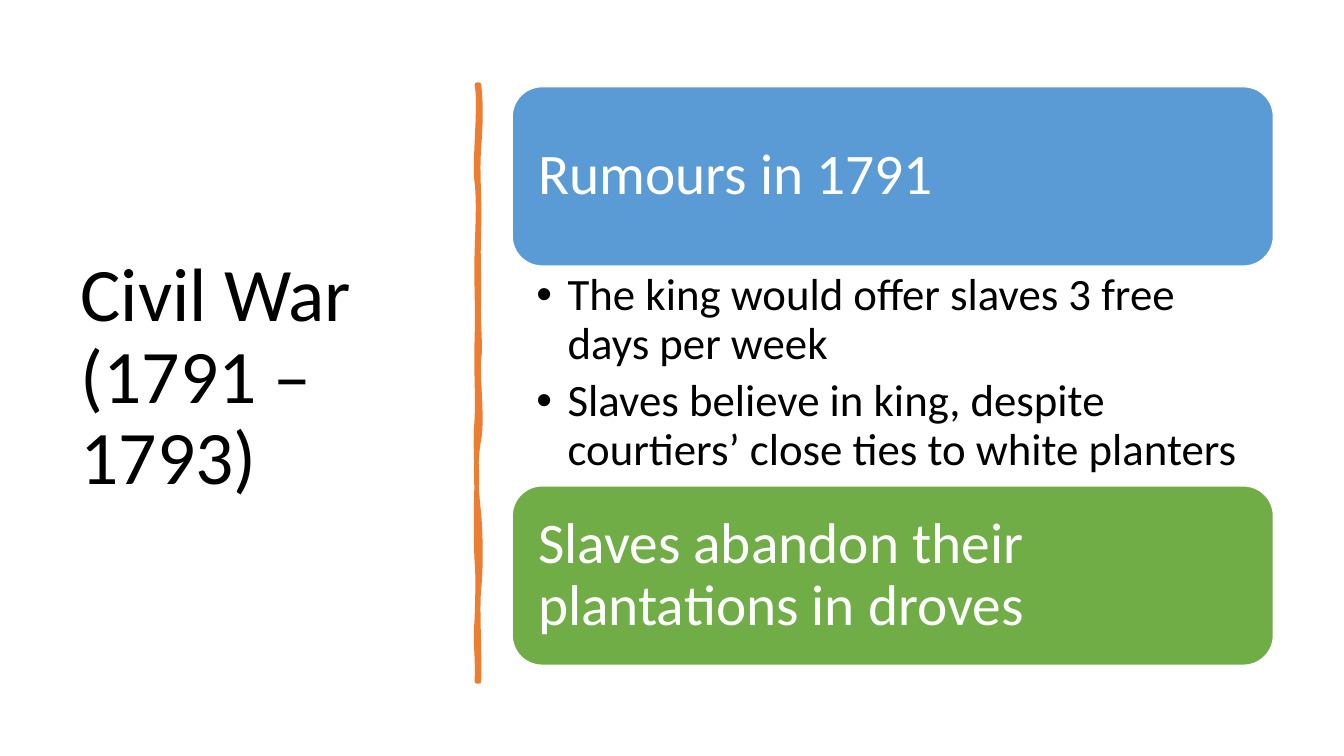
from pptx import Presentation
from pptx.dml.color import RGBColor
from pptx.enum.shapes import MSO_SHAPE
from pptx.enum.text import MSO_ANCHOR, MSO_AUTO_SIZE, PP_ALIGN
from pptx.oxml.ns import qn
from pptx.util import Inches, Pt
from lxml import etree

ROUNDED = MSO_SHAPE.ROUNDED_RECTANGLE
MIDDLE, TOP = MSO_ANCHOR.MIDDLE, MSO_ANCHOR.TOP
LEFT = PP_ALIGN.LEFT
NO_AUTOFIT = MSO_AUTO_SIZE.NONE

BLACK = RGBColor(0x00, 0x00, 0x00)
WHITE = RGBColor(0xFF, 0xFF, 0xFF)
ORANGE = RGBColor(0xED, 0x7D, 0x31)
BLUE = RGBColor(0x5B, 0x9B, 0xD5)
GREEN = RGBColor(0x70, 0xAD, 0x47)

# Brush stroke outline: start point, then two control points and an end per curve
STROKE_START = (4.75, 0.84)
STROKE_CURVES = [
    (4.77, 1.02, 4.77, 1.19, 4.75, 1.46), (4.73, 1.73, 4.76, 1.95, 4.75, 2.26),
    (4.74, 2.57, 4.75, 2.62, 4.75, 2.94), (4.74, 3.25, 4.77, 3.42, 4.75, 3.56),
    (4.73, 3.7, 4.79, 4.14, 4.75, 4.36), (4.71, 4.57, 4.72, 4.84, 4.75, 5.1),
    (4.77, 5.36, 4.77, 5.64, 4.75, 5.84), (4.73, 6.03, 4.76, 6.5, 4.75, 6.76),
    (4.74, 6.76, 4.73, 6.76, 4.73, 6.76), (4.74, 6.46, 4.71, 6.44, 4.73, 6.13),
    (4.74, 5.83, 4.74, 5.7, 4.73, 5.57), (4.72, 5.44, 4.72, 4.95, 4.73, 4.77),
    (4.73, 4.59, 4.71, 4.45, 4.73, 4.15), (4.74, 3.86, 4.72, 3.73, 4.73, 3.35),
    (4.74, 2.98, 4.72, 2.81, 4.73, 2.5), (4.74, 2.18, 4.75, 2, 4.73, 1.81),
    (4.7, 1.63, 4.77, 1.04, 4.73, 0.84), (4.74, 0.84, 4.74, 0.84, 4.75, 0.84),
]


def format_text(frame, size, color, insets, anchor):
    frame.word_wrap = True
    frame.auto_size = NO_AUTOFIT
    frame.vertical_anchor = anchor
    (frame.margin_left, frame.margin_top,
     frame.margin_right, frame.margin_bottom) = map(Inches, insets)
    for paragraph in frame.paragraphs:
        paragraph.alignment = LEFT
        paragraph.line_spacing = 0.9
        for run in paragraph.runs:
            run.font.name = "Calibri"
            run.font.size = Pt(size)
            run.font.color.rgb = color


def place_title(slide, text, left, top, width, height):
    title = slide.shapes.title
    title.left, title.top = Inches(left), Inches(top)
    title.width, title.height = Inches(width), Inches(height)
    title.text_frame.text = text
    format_text(title.text_frame, 54, BLACK, (0.1, 0.05, 0.1, 0.05), MIDDLE)


def draw_brush_stroke(slide):
    builder = slide.shapes.build_freeform(*map(Inches, STROKE_START))
    ends = [(Inches(x), Inches(y)) for *_, x, y in STROKE_CURVES]
    builder.add_line_segments(ends, close=True)
    stroke = builder.convert_to_shape()
    stroke.shadow.inherit = False
    stroke.fill.solid()
    stroke.fill.fore_color.rgb = ORANGE
    stroke.line.color.rgb = ORANGE
    stroke.line.width = Pt(3.25)
    # Bend each straight segment into its curve
    segments = list(stroke._element.iter(qn("a:lnTo")))
    for segment, curve in zip(segments, STROKE_CURVES):
        segment.tag = qn("a:cubicBezTo")
        for child in list(segment):
            segment.remove(child)
        for x, y in zip(curve[::2], curve[1::2]):
            point = etree.SubElement(segment, qn("a:pt"))
            point.set("x", str(Inches(x) - stroke.left))
            point.set("y", str(Inches(y) - stroke.top))


def add_banner(slide, text, color, left, top, width, height):
    banner = slide.shapes.add_shape(
        ROUNDED, Inches(left), Inches(top), Inches(width), Inches(height))
    banner.shadow.inherit = False
    banner.fill.solid()
    banner.fill.fore_color.rgb = color
    banner.line.color.rgb = WHITE
    banner.line.width = Pt(1)
    banner.text_frame.text = text
    format_text(banner.text_frame, 41, WHITE, (0.17,) * 4, MIDDLE)


def add_details(slide, details, left, top, width, height):
    box = slide.shapes.add_textbox(
        Inches(left), Inches(top), Inches(width), Inches(height))
    frame = box.text_frame
    frame.text = "\n".join(details)
    for paragraph in frame.paragraphs:
        properties = paragraph._p.get_or_add_pPr()
        properties.set("marL", str(Inches(0.31)))
        properties.set("indent", str(-Inches(0.31)))
        etree.SubElement(properties, qn("a:buFont")).set("typeface", "Arial")
        etree.SubElement(properties, qn("a:buChar")).set("char", "•")
        paragraph.level = 1
        paragraph.space_after = Pt(6.4)
    format_text(frame, 32, BLACK, (0.24, 0.06, 0.32, 0.06), TOP)


def add_events(slide, left, top, width):
    banner_height, details_height = 1.78, 2.18
    details_top = top + banner_height
    add_banner(slide, "Rumours in 1791", BLUE, left, top, width, banner_height)
    add_details(slide, [
        "The king would offer slaves 3 free days per week",
        "Slaves believe in king, despite courtiers’ close ties to white planters",
    ], left, details_top, width, details_height)
    add_banner(slide, "Slaves abandon their plantations in droves", GREEN,
               left, details_top + details_height, width, banner_height)


def main():
    presentation = Presentation()
    presentation.slide_width = Inches(13.33)
    presentation.slide_height = Inches(7.5)
    slide = presentation.slides.add_slide(presentation.slide_layouts[5])
    # Title on the left, divider, events on the right
    place_title(slide, "Civil War (1791 – 1793)", 0.7, 0.7, 3.74, 6.11)
    draw_brush_stroke(slide)
    add_events(slide, 5.08, 0.86, 7.55)
    presentation.save("out.pptx")


if __name__ == "__main__":
    main()
